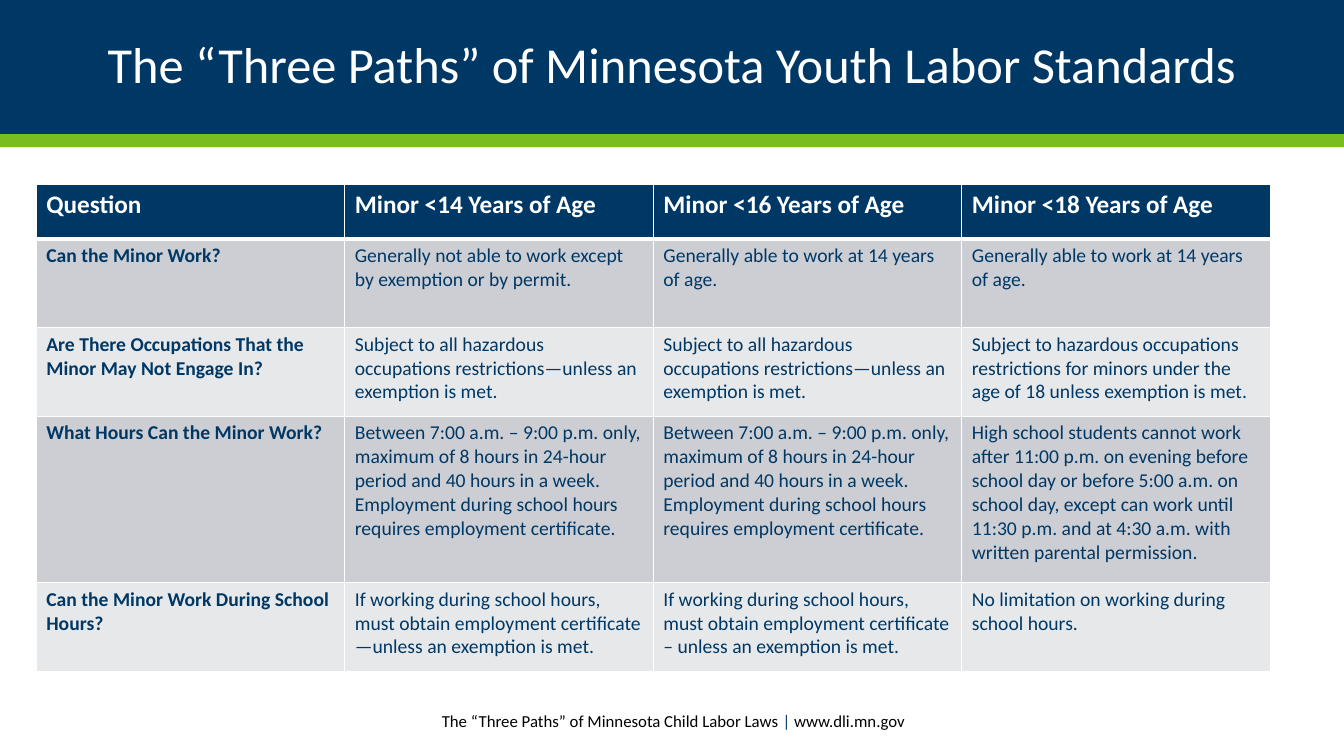
"""Build the slide comparing Minnesota youth labor standards by age."""
from dataclasses import dataclass
from typing import Any

import lxml.etree
import pptx
import pptx.dml.color
import pptx.enum.shapes
import pptx.enum.text
import pptx.oxml.ns
import pptx.util

Inches = pptx.util.Inches
Pt = pptx.util.Pt
Align = pptx.enum.text.PP_ALIGN
Anchor = pptx.enum.text.MSO_ANCHOR

NAVY, GREEN, WHITE, BLACK = "003865", "78BE21", "FFFFFF", "000000"
DARK_BAND, LIGHT_BAND = "CCCED3", "E7E8EA"
SLIDE_WIDTH = 13.33
COLUMN_WIDTH = 3.06


@dataclass(frozen=True)
class Band:
    top: float
    height: float
    color: str


@dataclass(frozen=True)
class Run:
    text: str
    size: float
    color: str
    bold: bool = False


@dataclass(frozen=True)
class Topic:
    height: float
    question: str
    answers: tuple[str, ...]


BANDS = (Band(1.33, 0.13, GREEN), Band(0, 1.33, NAVY))
TITLE = Run("The “Three Paths” of Minnesota Youth Labor Standards", 36, WHITE)
FOOTER = (
    Run(" ", 9, BLACK),
    Run("The “Three Paths” of Minnesota Child Labor Laws", 12, BLACK),
    Run(" |", 12, NAVY),
    Run(" www.dli.mn.gov", 12, BLACK),
)

FROM_14 = "Generally able to work at 14 years of age."
ALL_HAZARDS = "Subject to all hazardous occupations restrictions—unless an exemption is met."
DAY_HOURS = (
    "Between 7:00 a.m. – 9:00 p.m. only, maximum of 8 hours in 24-hour period and "
    "40 hours in a week. Employment during school hours requires employment certificate."
)
CERTIFICATE = (
    "If working during school hours, must obtain employment certificate"
    "{}unless an exemption is met."
)
TOPICS = (
    Topic(0.54, "Question", tuple(f"Minor <{age} Years of Age" for age in (14, 16, 18))),
    Topic(0.88, "Can the Minor Work?", (
        "Generally not able to work except by exemption or by permit.", FROM_14, FROM_14)),
    Topic(0.88, "Are There Occupations That the Minor May Not Engage In?", (
        ALL_HAZARDS, ALL_HAZARDS,
        "Subject to hazardous occupations restrictions for minors under the age of 18 "
        "unless exemption is met.")),
    Topic(1.65, "What Hours Can the Minor Work?", (
        DAY_HOURS, DAY_HOURS,
        "High school students cannot work after 11:00 p.m. on evening before school day or "
        "before 5:00 a.m. on school day, except can work until 11:30 p.m. and at 4:30 a.m. "
        "with written parental permission.")),
    Topic(0.88, "Can the Minor Work During School Hours?", (
        CERTIFICATE.format("—"), CERTIFICATE.format(" – "),
        "No limitation on working during school hours.")),
)


def rgb(color: str) -> pptx.dml.color.RGBColor:
    """Turn a hex string into a colour."""
    return pptx.dml.color.RGBColor.from_string(color)


def apply(target: Any, values: dict[str, Any]) -> None:
    """Set each named attribute on the target."""
    for name, value in values.items():
        setattr(target, name, value)


def write(paragraph: Any, *runs: Run) -> None:
    """Add formatted runs to a paragraph."""
    for part in runs:
        run = paragraph.add_run()
        run.text = part.text
        apply(run.font, {"name": "Calibri", "size": Pt(part.size), "bold": part.bold})
        run.font.color.rgb = rgb(part.color)


def draw_band(slide: Any, band: Band) -> Any:
    """Draw a full-width colour band."""
    shape = slide.shapes.add_shape(
        pptx.enum.shapes.MSO_SHAPE.RECTANGLE,
        Inches(0), Inches(band.top), Inches(SLIDE_WIDTH), Inches(band.height))
    shape.shadow.inherit = False
    shape.fill.solid()
    shape.fill.fore_color.rgb = rgb(band.color)
    shape.line.fill.background()
    return shape


def write_title(header: Any) -> None:
    """Write the title inside the header band."""
    frame = header.text_frame
    apply(frame, {"word_wrap": True, "vertical_anchor": Anchor.MIDDLE,
                  "margin_left": Inches(0.9), "margin_right": Inches(0.9)})
    apply(frame.paragraphs[0], {"alignment": Align.CENTER, "line_spacing": 0.9})
    write(frame.paragraphs[0], TITLE)


def draw_footer(slide: Any) -> None:
    """Write the centred footer."""
    frame = slide.shapes.add_textbox(
        Inches(3.61), Inches(6.95), Inches(6.11), Inches(0.4)).text_frame
    apply(frame, {"word_wrap": True, "vertical_anchor": Anchor.MIDDLE})
    frame.paragraphs[0].alignment = Align.CENTER
    write(frame.paragraphs[0], *FOOTER)


def add_borders(cell: Any, widths: dict[str, float]) -> None:
    """Give a cell white borders of the given point widths."""
    qn = pptx.oxml.ns.qn
    properties = cell._tc.get_or_add_tcPr()
    for side, width in widths.items():
        border = lxml.etree.SubElement(properties, qn(f"a:ln{side}"), w=str(Pt(width)))
        fill = lxml.etree.SubElement(border, qn("a:solidFill"))
        lxml.etree.SubElement(fill, qn("a:srgbClr"), val=WHITE)


def draw_standards(slide: Any) -> None:
    """Draw the table of questions and answers by age."""
    columns = 1 + len(TOPICS[0].answers)
    table = slide.shapes.add_table(
        len(TOPICS), columns, Inches(0.36), Inches(1.83), Inches(COLUMN_WIDTH * columns),
        Inches(sum(topic.height for topic in TOPICS))).table
    table.horz_banding = False
    for column in table.columns:
        column.width = Inches(COLUMN_WIDTH)
    for row, topic in enumerate(TOPICS):
        table.rows[row].height = Inches(topic.height)
        heading = row == 0
        band = NAVY if heading else DARK_BAND if row % 2 else LIGHT_BAND
        size, color = (18, WHITE) if heading else (14, NAVY)
        widths = {"L": 1, "R": 1, "T": 3 if row == 1 else 1, "B": 3 if heading else 1}
        for column, text in enumerate((topic.question, *topic.answers)):
            cell = table.cell(row, column)
            add_borders(cell, widths)
            cell.fill.solid()
            cell.fill.fore_color.rgb = rgb(band)
            write(cell.text_frame.paragraphs[0],
                  Run(text, size, color, heading or column == 0))


def main() -> None:
    """Build and save the presentation."""
    deck = pptx.Presentation()
    apply(deck, {"slide_width": Inches(SLIDE_WIDTH), "slide_height": Inches(7.5)})
    slide = deck.slides.add_slide(deck.slide_layouts[6])
    _, header = [draw_band(slide, band) for band in BANDS]
    write_title(header)
    draw_footer(slide)
    draw_standards(slide)
    deck.save("out.pptx")


if __name__ == "__main__":
    main()
